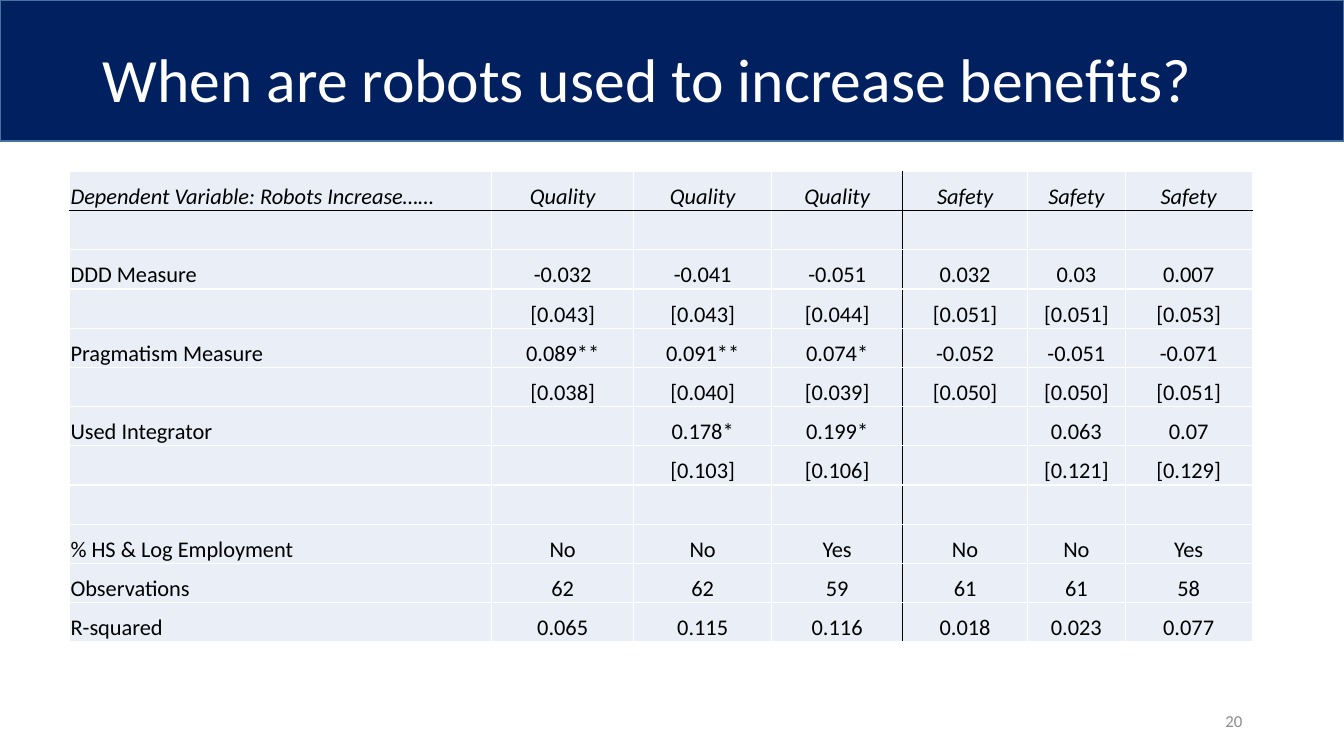
from dataclasses import dataclass

from lxml import etree
from pptx import Presentation
from pptx.dml.color import RGBColor
from pptx.enum.shapes import MSO_SHAPE
from pptx.enum.text import MSO_ANCHOR, PP_ALIGN
from pptx.oxml.ns import qn
from pptx.util import Inches, Pt

RECTANGLE = MSO_SHAPE.RECTANGLE
MIDDLE, BOTTOM = MSO_ANCHOR.MIDDLE, MSO_ANCHOR.BOTTOM
LEFT, CENTER, RIGHT = PP_ALIGN.LEFT, PP_ALIGN.CENTER, PP_ALIGN.RIGHT


@dataclass(frozen=True)
class Theme:
    """Colours, font and type sizes of the deck."""
    font: str = "Calibri"
    navy: str = "002060"
    band_edge: str = "43739E"
    white: str = "FFFFFF"
    black: str = "000000"
    grey: str = "8C8C8C"
    cell: str = "EAEFF7"
    title_size: int = 44
    table_size: int = 16
    number_size: int = 12
    rule_width: int = 1


THEME = Theme()
COLUMN_WIDTHS = (4.19, 1.41, 1.37, 1.3, 1.24, 0.97, 1.26)
FIRST_SAFETY_COLUMN = 4
REGRESSION_ROWS = (
    ("Dependent Variable: Robots Increase……",
     "Quality", "Quality", "Quality", "Safety", "Safety", "Safety"),
    ("",) * 7,
    ("DDD Measure", "-0.032", "-0.041", "-0.051", "0.032", "0.03", "0.007"),
    ("", "[0.043]", "[0.043]", "[0.044]", "[0.051]", "[0.051]", "[0.053]"),
    ("Pragmatism Measure",
     "0.089**", "0.091**", "0.074*", "-0.052", "-0.051", "-0.071"),
    ("", "[0.038]", "[0.040]", "[0.039]", "[0.050]", "[0.050]", "[0.051]"),
    ("Used Integrator", "", "0.178*", "0.199*", "", "0.063", "0.07"),
    ("", "", "[0.103]", "[0.106]", "", "[0.121]", "[0.129]"),
    ("",) * 7,
    ("% HS & Log Employment", "No", "No", "Yes", "No", "No", "Yes"),
    ("Observations", "62", "62", "59", "61", "61", "58"),
    ("R-squared", "0.065", "0.115", "0.116", "0.018", "0.023", "0.077"),
)


def format_text(frame, size, color, align, italic=False):
    """Format every paragraph and run of a text frame."""
    for para in frame.paragraphs:
        para.alignment = align
        for span in para.runs:
            span.font.name = THEME.font
            span.font.size = Pt(size)
            span.font.italic = italic
            span.font.color.rgb = RGBColor.from_string(color)


def add_header(page, left, top, width, height, text):
    """Place the title on a navy band that fills the given box."""
    band = page.shapes.add_shape(
        RECTANGLE, Inches(left), Inches(top), Inches(width), Inches(height))
    band.shadow.inherit = False
    band.fill.solid()
    band.fill.fore_color.rgb = RGBColor.from_string(THEME.navy)
    band.line.color.rgb = RGBColor.from_string(THEME.band_edge)
    band.line.width = Pt(THEME.rule_width)

    title = page.shapes.title
    title._element.addprevious(band._element)
    title.left, title.top = Inches(left + 0.92), Inches(top + 0.09)
    title.width, title.height = Inches(width - 1.36), Inches(height + 0.05)
    frame = title.text_frame
    frame.text = text
    frame.word_wrap = True
    frame.vertical_anchor = MIDDLE
    frame.paragraphs[0].line_spacing = 0.9
    format_text(frame, THEME.title_size, THEME.white, LEFT)


def set_borders(cell, colors):
    """Draw the left, right, top and bottom borders of a cell."""
    properties = cell._tc.get_or_add_tcPr()
    for side, color in zip("LRTB", colors):
        line = etree.SubElement(
            properties, qn(f"a:ln{side}"), w=str(Pt(THEME.rule_width)))
        fill = etree.SubElement(line, qn("a:solidFill"))
        etree.SubElement(fill, qn("a:srgbClr"), val=color)


def format_cell(cell, row, column):
    """Style a cell by its place in the regression table."""
    dark_sides = (column == FIRST_SAFETY_COLUMN,
                  column == FIRST_SAFETY_COLUMN - 1,
                  row == 1,
                  row == 0)
    set_borders(cell, [THEME.black if dark else THEME.white
                       for dark in dark_sides])
    cell.fill.solid()
    cell.fill.fore_color.rgb = RGBColor.from_string(THEME.cell)
    cell.margin_left = cell.margin_right = cell.margin_top = Inches(0.01)
    cell.margin_bottom = 0
    cell.vertical_anchor = BOTTOM
    format_text(cell.text_frame, THEME.table_size, THEME.black,
                CENTER if column else LEFT, italic=row == 0)


def add_regression_table(page, left, top, width, height):
    """Fill the given box with the regression results."""
    table = page.shapes.add_table(
        len(REGRESSION_ROWS), len(COLUMN_WIDTHS),
        Inches(left), Inches(top), Inches(width), Inches(height)).table
    scale = width / sum(COLUMN_WIDTHS)
    for column, share in zip(table.columns, COLUMN_WIDTHS):
        column.width = Inches(share * scale)
    for row, values in enumerate(REGRESSION_ROWS):
        table.rows[row].height = Inches(height / len(REGRESSION_ROWS))
        for column, value in enumerate(values):
            cell = table.cell(row, column)
            cell.text = value
            format_cell(cell, row, column)


def add_page_number(page, left, top, width, height, number):
    """Place the page number at the right of the given box."""
    box = page.shapes.add_textbox(
        Inches(left), Inches(top), Inches(width), Inches(height))
    frame = box.text_frame
    frame.word_wrap = True
    frame.vertical_anchor = MIDDLE
    frame.text = str(number)
    format_text(frame, THEME.number_size, THEME.grey, RIGHT)


def build_results_page(deck):
    """Add the page of regression results."""
    page = deck.slides.add_slide(deck.slide_layouts.get_by_name("Title Only"))
    add_header(page, 0, 0, 13.33, 1.4,
               "When are robots used to increase benefits?")
    add_regression_table(page, 0.69, 1.7, 11.73, 4.67)
    add_page_number(page, 9.42, 6.95, 3, 0.4, 20)


def main():
    """Build and save the deck."""
    deck = Presentation()
    deck.slide_width, deck.slide_height = Inches(13.33), Inches(7.5)
    build_results_page(deck)
    deck.save("out.pptx")


if __name__ == "__main__":
    main()
